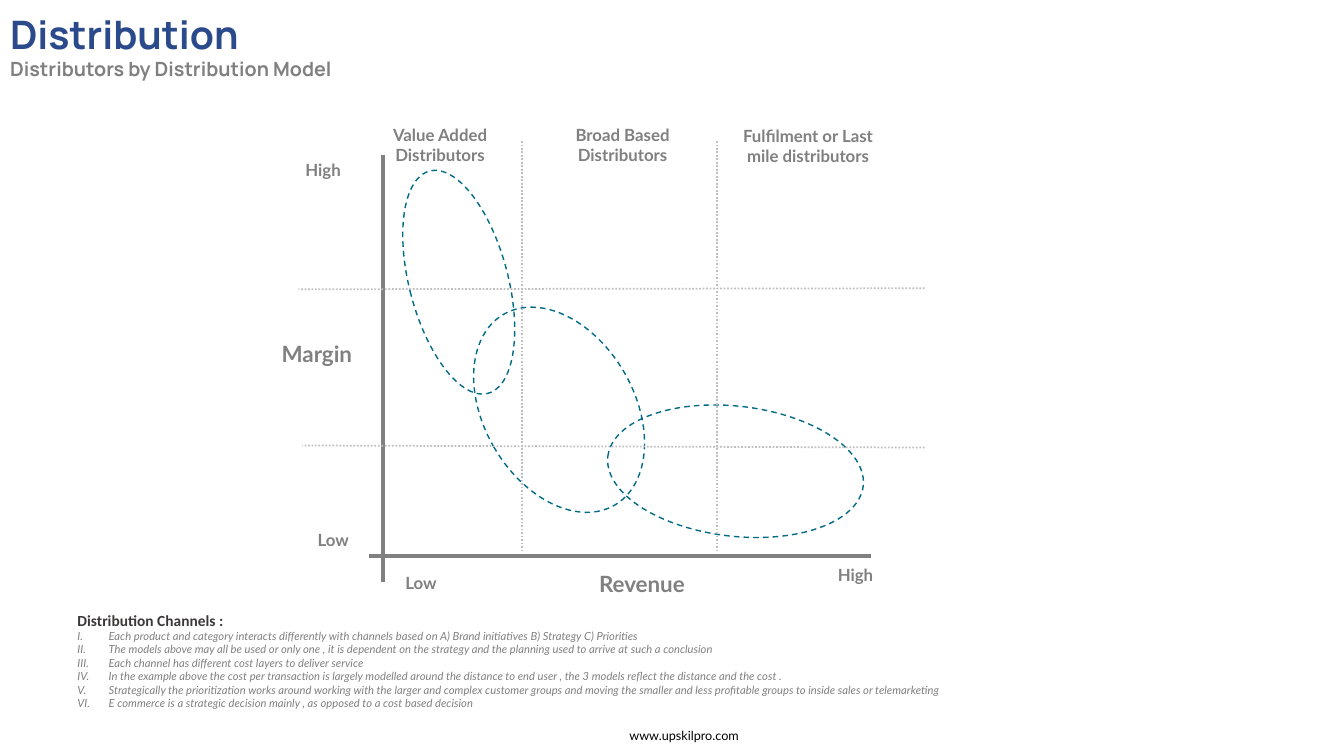
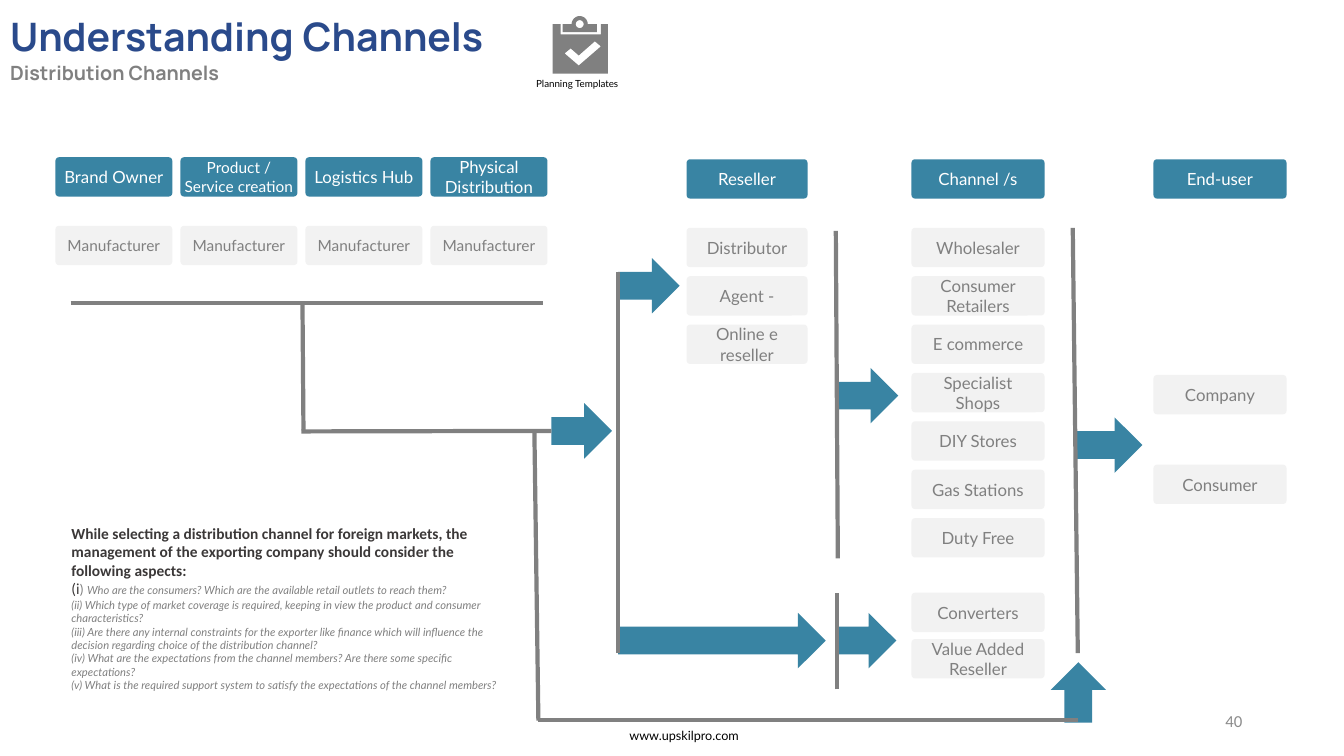
"""Build two slides on distribution models and channels."""
import dataclasses
import math

import pptx
import pptx.dml.color
import pptx.enum.dml
import pptx.enum.shapes
import pptx.enum.text
import pptx.oxml.ns
import pptx.util
from lxml import etree

PX = 9144
SHAPES = pptx.enum.shapes.MSO_SHAPE
ALIGN = pptx.enum.text.PP_ALIGN
ANCHOR = pptx.enum.text.MSO_ANCHOR
DASH = pptx.enum.dml.MSO_LINE


@dataclasses.dataclass(frozen=True)
class Style:
    """Type settings of one run."""
    size: float
    color: str
    font: str = "Lato"
    bold: bool = False
    italic: bool = False


class Theme:
    """Colours and type styles shared by the slides."""
    grey, dotted, teal, blue, pale = "808080", "BFBFBF", "006B86", "3984A3", "F2F2F2"
    title = Style(28, "2A4A8B", "Manrope", True)
    title_gap = Style(32, "2A4A8B", "Manrope", True)
    subtitle = Style(14, grey, "Manrope", True)
    label = Style(12, grey, bold=True)
    axis = Style(16, grey, bold=True)
    heading = Style(11, "3B3838", "Calibri", True)
    marker = Style(11, "3B3838", "Calibri")
    marker_end = Style(10, grey, "Calibri")
    note = Style(8, grey, italic=True)
    header = Style(12, "FFFFFF")
    header_small = Style(11, "FFFFFF")
    box = Style(12, grey)
    box_small = Style(11, grey)
    footer = Style(9, "000000")
    caption = Style(7, "000000")
    page = Style(12, "8C8C8C", "Calibri")


def rgb(color):
    """Return a colour object for a hex string."""
    return pptx.dml.color.RGBColor.from_string(color)


def place(shape, left, top, width, height):
    """Set position and size in px."""
    shape.left, shape.top = left * PX, top * PX
    shape.width, shape.height = width * PX, height * PX


def number_paragraph(paragraph):
    """Give a paragraph a hanging upper-case Roman number."""
    properties = paragraph._p.get_or_add_pPr()
    properties.set("marL", str(31 * PX))
    properties.set("indent", str(-31 * PX))
    bullet = etree.SubElement(properties, pptx.oxml.ns.qn("a:buAutoNum"))
    bullet.set("type", "romanUcPeriod")


def write(shape, paragraphs, align=ALIGN.LEFT, anchor=ANCHOR.TOP, grow=True, numbered_from=None):
    """Write paragraphs, each a list of (text, style) runs."""
    frame = shape.text_frame
    frame.word_wrap = True
    frame.vertical_anchor = anchor
    sizes = pptx.enum.text.MSO_AUTO_SIZE
    frame.auto_size = sizes.SHAPE_TO_FIT_TEXT if grow else sizes.NONE
    for index, runs in enumerate(paragraphs):
        paragraph = frame.add_paragraph() if index else frame.paragraphs[0]
        paragraph.alignment = align
        if numbered_from is not None and index >= numbered_from:
            number_paragraph(paragraph)
        for text, style in runs:
            run = paragraph.add_run()
            run.text = text
            run.font.name = style.font
            run.font.size = pptx.util.Pt(style.size)
            run.font.bold, run.font.italic = style.bold, style.italic
            run.font.color.rgb = rgb(style.color)


def add_text(slide, bounds, paragraphs, **options):
    """Add a text box."""
    shape = slide.shapes.add_textbox(0, 0, 0, 0)
    place(shape, *bounds)
    write(shape, paragraphs, **options)


def add_label(slide, bounds, text, style=Theme.label, align=ALIGN.CENTER):
    """Add a one-paragraph text box."""
    add_text(slide, bounds, [[(text, style)]], align=align)


def add_line(slide, start, end, color=Theme.grey, width=3, dash=None):
    """Add a straight line between two points."""
    points = [value * PX for value in (*start, *end)]
    line = slide.shapes.add_connector(pptx.enum.shapes.MSO_CONNECTOR.STRAIGHT, *points)
    line.line.color.rgb = rgb(color)
    line.line.width = pptx.util.Pt(width)
    if dash is not None:
        line.line.dash_style = dash
    etree.SubElement(line._element.spPr, pptx.oxml.ns.qn("a:effectLst"))
    return line


def fill_plain(shape, color):
    """Give a shape a flat fill with no line or shadow."""
    shape.shadow.inherit = False
    shape.fill.solid()
    shape.fill.fore_color.rgb = rgb(color)
    shape.line.fill.background()


def add_arrow(slide, bounds, kind=SHAPES.RIGHT_ARROW):
    """Add a block arrow."""
    arrow = slide.shapes.add_shape(kind, 0, 0, 0, 0)
    place(arrow, *bounds)
    fill_plain(arrow, Theme.blue)
    return arrow


def add_box(slide, left, top, width, text, style=Theme.box, header=False):
    """Add a rounded box with centred text."""
    box = slide.shapes.add_shape(SHAPES.ROUNDED_RECTANGLE, 0, 0, 0, 0)
    place(box, left, top, width, 39)
    box.adjustments[0] = 0.09
    fill_plain(box, Theme.blue if header else Theme.pale)
    if header:
        frame = box.text_frame
        frame.margin_left = frame.margin_right = frame.margin_top = frame.margin_bottom = 0
    write(box, [[(text, style)]], align=ALIGN.CENTER, anchor=ANCHOR.MIDDLE, grow=False)


def add_ellipse(slide, bounds, rotation):
    """Add a dashed, tilted ellipse."""
    ellipse = slide.shapes.add_shape(SHAPES.OVAL, 0, 0, 0, 0)
    place(ellipse, *bounds)
    ellipse.rotation = rotation
    ellipse.shadow.inherit = False
    ellipse.fill.background()
    ellipse.line.color.rgb = rgb(Theme.teal)
    ellipse.line.width = pptx.util.Pt(1)
    ellipse.line.dash_style = DASH.DASH


def arc(center_x, center_y, radius, start, end, steps=16):
    """Return points along an arc, with angles in degrees."""
    angles = [math.radians(start + (end - start) * step / steps) for step in range(steps + 1)]
    return [(center_x + radius * math.cos(angle), center_y + radius * math.sin(angle))
            for angle in angles]


def add_outline(slide, *contours):
    """Add one grey freeform made of closed contours."""
    builder = None
    for contour in contours:
        points = [(x * PX, y * PX) for x, y in contour]
        if builder is None:
            builder = slide.shapes.build_freeform(*points[0])
        else:
            builder.move_to(*points[0])
        builder.add_line_segments(points[1:], close=True)
    fill_plain(builder.convert_to_shape(), Theme.grey)


def add_clipboard(slide):
    """Draw the clipboard icon with its caption."""
    add_label(slide, (516, 72, 113, 22), "Planning Templates", Theme.caption)
    clip = [(592, 32), (558, 32), (558, 24)] + arc(575, 24, 8, 180, 360) + [(592, 24)]
    add_outline(slide, clip, arc(575, 24, 4, 0, 360))
    board = [(596, 24), (596, 34), (556, 34), (556, 24),
             (548, 24), (548, 73), (603, 73), (603, 24)]
    tick = [(574, 65), (560, 53), (566, 48), (574, 55), (590, 41), (596, 46)]
    add_outline(slide, board, tick)


def add_slide(presentation, bounds, title_runs, subtitle):
    """Add a slide with its title, subtitle and footer."""
    slide = presentation.slides.add_slide(presentation.slide_layouts[5])
    title = slide.shapes.title
    place(title, *bounds)
    write(title, [title_runs, [(subtitle, Theme.subtitle)]])
    add_label(slide, (522, 717, 313, 25), "www.upskilpro.com", Theme.footer)
    return slide


def build_models(presentation):
    """Build the margin and revenue map."""
    slide = add_slide(presentation, (0, 5, 861, 81), [("Distribution", Theme.title)],
                      "Distributors by Distribution Model")
    add_line(slide, (380, 154), (380, 577))
    add_line(slide, (864, 552), (366, 552))
    for bounds, rotation in (((406, 166, 98, 228), 345.3), ((480, 297, 149, 219), 329.8),
                             ((602, 403, 255, 129), 6.6)):
        add_ellipse(slide, bounds, rotation)
    for left, top, text in ((277, 154, "High"), (287, 521, "Low"),
                            (374, 563, "Low"), (805, 555, "High")):
        add_label(slide, (left, top, 87, 30), text)
    for left, top, text in ((224, 333, "Margin"), (554, 561, "Revenue")):
        add_label(slide, (left, top, 135, 37), text, Theme.axis, ALIGN.RIGHT)
    add_text(slide, (371, 119, 131, 50),
             [[("Value Added", Theme.label)], [("Distributors", Theme.label)]], align=ALIGN.CENTER)
    add_label(slide, (552, 119, 131, 50), "Broad Based Distributors")
    add_label(slide, (711, 120, 181, 50), "Fulfilment or Last mile distributors")
    for start, end in (((518, 547), (518, 140)), ((711, 547), (711, 140)),
                       ((917, 286), (296, 287)), ((917, 444), (300, 442))):
        add_line(slide, start, end, Theme.dotted, 1.25, DASH.ROUND_DOT)
    notes = (
        "Each product and category interacts differently with channels based on A) Brand initiatives B) Strategy C) Priorities",
        "The models above may all be used or only one , it is dependent on the strategy and the planning used to arrive at such a conclusion",
        "Each channel has different cost layers to deliver service",
        "In the example above the cost per transaction is largely modelled around the distance to end user , the 3 models reflect the distance and the cost .",
        "Strategically the prioritization works around working with the larger and complex customer groups and moving the smaller and less profitable groups to inside sales or telemarketing",
        "E commerce is a strategic decision mainly , as opposed to a cost based decision",
    )
    add_text(slide, (67, 601, 1100, 109),
             [[("Distribution Channels :", Theme.heading)]] + [[(note, Theme.note)] for note in notes],
             numbered_from=1)


def build_channels(presentation):
    """Build the flow from brand owner to end-user."""
    slide = add_slide(presentation, (0, 2, 627, 88),
                      [("Understanding", Theme.title), (" ", Theme.title_gap),
                       ("Channels", Theme.title)], "Distribution Channels")
    add_clipboard(slide)
    stages = (("Brand Owner", Theme.header), ("Product / Service creation", Theme.header_small),
              ("Logistics Hub", Theme.header), ("Physical Distribution", Theme.header))
    for index, (text, style) in enumerate(stages):
        left = 55 + 124 * index
        add_box(slide, left, 156, 116, text, style, header=True)
        add_box(slide, left, 224, 116, "Manufacturer", Theme.box_small)
    columns = (
        (681, 120, "Reseller", 226, 48, ("Distributor", "Agent -", "Online e reseller")),
        (904, 132, "Channel /s", 226, 48,
         ("Wholesaler", "Consumer Retailers", "E commerce", "Specialist Shops",
          "DIY Stores", "Gas Stations", "Duty Free")),
        (904, 132, None, 588, 46, ("Converters", "Value Added Reseller")),
        (1144, 132, "End-user", 372, 89, ("Company", "Consumer")),
    )
    for left, width, heading, top, step, names in columns:
        if heading:
            add_box(slide, left, 158, width, heading, Theme.header, header=True)
        for index, name in enumerate(names):
            add_box(slide, left, top + step * index, width, name)
    for left, top, width in ((613, 608, 206), (613, 256, 61), (1067, 414, 66),
                             (831, 365, 60), (829, 608, 60)):
        add_arrow(slide, (left, top, width, 55))
    supply_arrow = add_arrow(slide, (547, 400, 60, 55))
    add_arrow(slide, (1042, 657, 55, 60), SHAPES.UP_ARROW)
    for start, end in (((613, 648), (613, 270)), ((1069, 648), (1064, 226)),
                       ((831, 554), (829, 229)), ((830, 684), (830, 588)),
                       ((301, 427), (300, 301)), ((70, 301), (539, 301)),
                       ((534, 714), (1069, 714)), ((534, 715), (530, 427))):
        add_line(slide, start, end)
    add_line(slide, (299, 428), (547, 427)).end_connect(supply_arrow, 1)
    aspects = (
        "(ii) Which type of market coverage is required, keeping in view the product and consumer characteristics?",
        "(iii) Are there any internal constraints for the exporter like finance which will influence the decision regarding choice of the distribution channel?",
        "(iv) What are the expectations from the channel members? Are there some specific expectations?",
        "(v) What is the required support system to satisfy the expectations of the channel members?",
    )
    add_text(slide, (61, 515, 455, 192), [
        [("While selecting a distribution channel for foreign markets, the management of the exporting company should consider the following aspects:", Theme.heading)],
        [("(i", Theme.marker), (") ", Theme.marker_end),
         ("Who are the consumers? Which are the available retail outlets to reach them?", Theme.note)],
    ] + [[(aspect, Theme.note)] for aspect in aspects])
    add_text(slide, (942, 695, 300, 40), [[("40", Theme.page)]],
             align=ALIGN.RIGHT, anchor=ANCHOR.MIDDLE, grow=False)


def main():
    """Build and save the presentation."""
    presentation = pptx.Presentation()
    presentation.slide_width, presentation.slide_height = 1333 * PX, 750 * PX
    build_models(presentation)
    build_channels(presentation)
    presentation.save("out.pptx")


if __name__ == "__main__":
    main()
